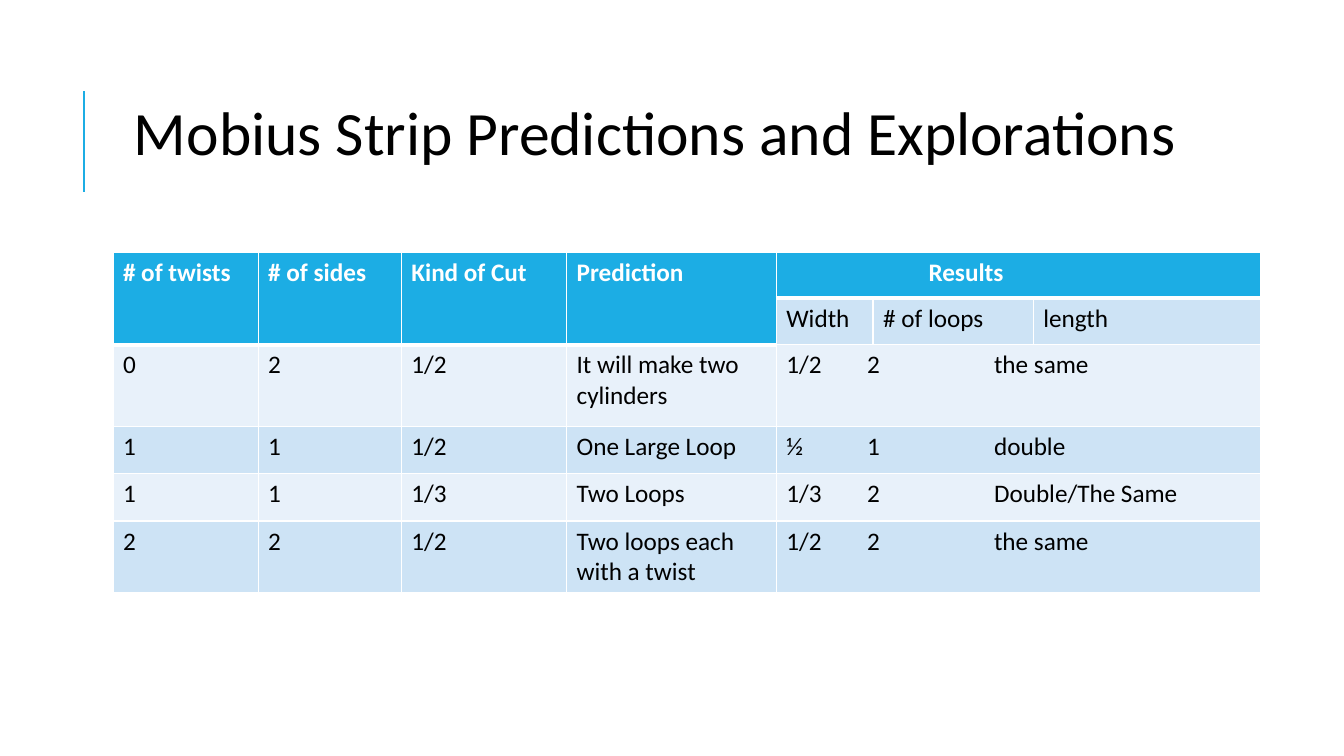
from dataclasses import dataclass

from lxml.etree import SubElement
from pptx import Presentation
from pptx.dml.color import RGBColor
from pptx.enum.shapes import MSO_CONNECTOR
from pptx.oxml.ns import qn
from pptx.util import Inches, Pt


@dataclass(frozen=True)
class Theme:
    font: str = "Calibri"
    title_size: int = 44
    cell_size: int = 18
    accent: str = "1CADE4"
    band_dark: str = "CDE3F5"
    band_light: str = "E8F1FA"
    white: str = "FFFFFF"
    black: str = "000000"


theme = Theme()


def add_text(para, text, size, color, bold=False):
    span = para.add_run()
    span.text = text
    span.font.name = theme.font
    span.font.size = Pt(size)
    span.font.bold = bold
    span.font.color.rgb = RGBColor.from_string(color)


def add_borders(cell, bottom_width):
    """Draw white rules on all four sides of a table cell."""
    properties = cell._tc.get_or_add_tcPr()
    for side, width in (("L", 1), ("R", 1), ("T", 1), ("B", bottom_width)):
        line = SubElement(properties, qn(f"a:ln{side}"), w=str(Pt(width)))
        fill = SubElement(line, qn("a:solidFill"))
        SubElement(fill, qn("a:srgbClr"), val=theme.white)


deck = Presentation()
deck.slide_width = Inches(13.33)
deck.slide_height = Inches(7.5)
page = deck.slides.add_slide(deck.slide_layouts[6])

# Title with its accent rule
rule = page.shapes.add_connector(
    MSO_CONNECTOR.STRAIGHT, Inches(0.83), Inches(1.9), Inches(0.83), Inches(0.9))
rule.line.color.rgb = RGBColor.from_string(theme.accent)
rule.line.width = Pt(1.5)
SubElement(rule._element.spPr, qn("a:effectLst"))

title = page.shapes.add_textbox(Inches(1.23), Inches(0.88), Inches(10.6), Inches(0.84))
title.text_frame.word_wrap = True
add_text(title.text_frame.paragraphs[0], "Mobius Strip Predictions and Explorations",
         theme.title_size, theme.black)

# Table: two header rows, then one row per experiment
column_widths = (1.44, 1.42, 1.64, 2.08, 0.96, 1.59, 2.25)
row_heights = (0.46, 0.46, 0.81, 0.47, 0.47, 0.71)
rows = (
    ("# of twists", "# of sides", "Kind of Cut", "Prediction", "Results", "", ""),
    ("", "", "", "", "Width", "# of loops", "length"),
    ("0", "2", "1/2", "It will make two cylinders", "1/2\t2\tthe same", "", ""),
    ("1", "1", "1/2", "One Large Loop", "½\t1\tdouble", "", ""),
    ("1", "1", "1/3", "Two Loops", "1/3\t2\tDouble/The Same", "", ""),
    ("2", "2", "1/2", "Two loops each with a twist", "1/2\t2\tthe same", "", ""),
)
RESULTS = 4  # first of the three result columns
result_stops = (0.8, 2.06)

table = page.shapes.add_table(
    len(rows), len(column_widths), Inches(1.12), Inches(2.5),
    Inches(sum(column_widths)), Inches(sum(row_heights))).table
for column, width in zip(table.columns, column_widths):
    column.width = Inches(width)
for row, height in zip(table.rows, row_heights):
    row.height = Inches(height)

for column in range(RESULTS):
    table.cell(0, column).merge(table.cell(1, column))
for row in (0, 2, 3, 4, 5):
    table.cell(row, RESULTS).merge(table.cell(row, RESULTS + 2))

for row, texts in enumerate(rows):
    for column, text in enumerate(texts):
        cell = table.cell(row, column)
        header = row == 0 or (row == 1 and column < RESULTS)
        band = theme.band_dark if row % 2 else theme.band_light
        add_borders(cell, 3 if header else 1)
        cell.fill.solid()
        cell.fill.fore_color.rgb = RGBColor.from_string(theme.accent if header else band)
        if not text:
            continue
        para = cell.text_frame.paragraphs[0]
        if "\t" in text:
            stops = SubElement(para._p.get_or_add_pPr(), qn("a:tabLst"))
            for stop in result_stops:
                SubElement(stops, qn("a:tab"), pos=str(Inches(stop)), algn="l")
        add_text(para, text, theme.cell_size, theme.white if header else theme.black, header)

table.cell(0, RESULTS).margin_left = Inches(1.51)

deck.save("out.pptx")
